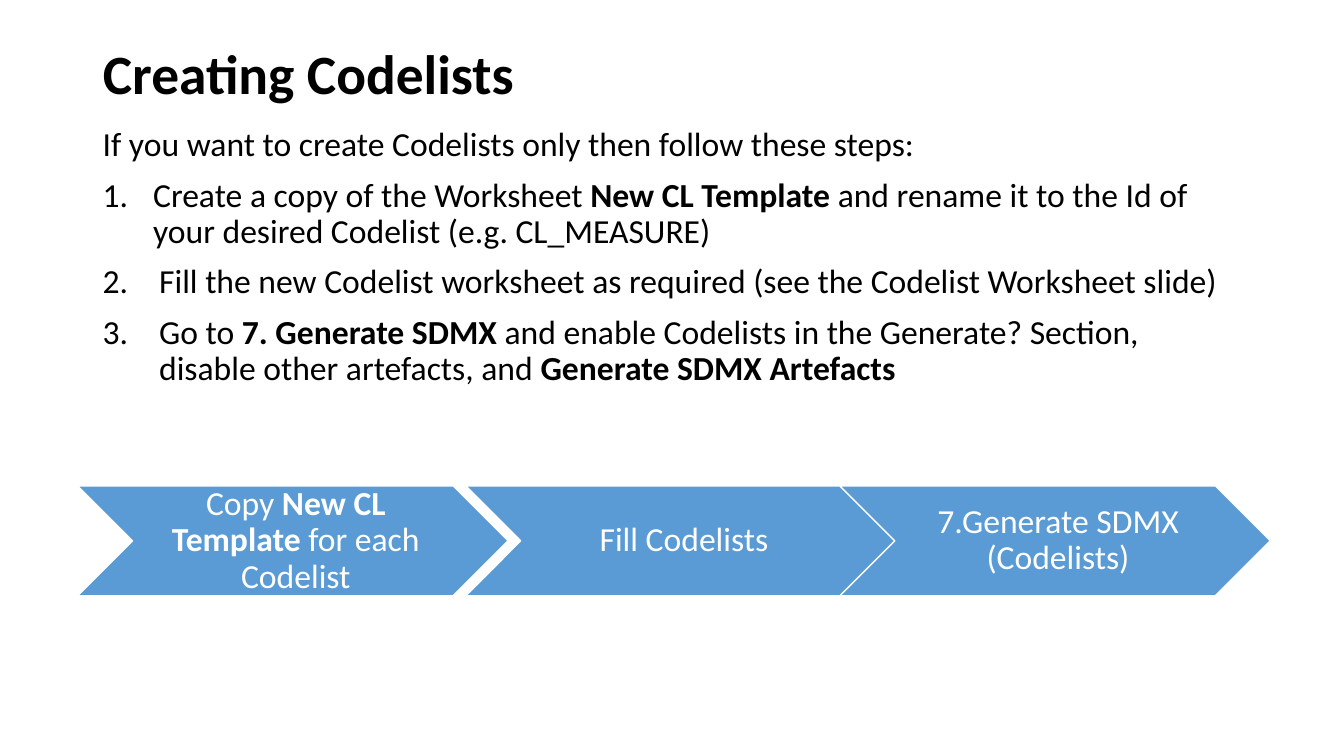
"""Build the slide that explains how to create codelists."""
from lxml.etree import SubElement
from pptx import Presentation
from pptx.dml.color import RGBColor
from pptx.enum.shapes import MSO_SHAPE
from pptx.enum.text import MSO_ANCHOR, PP_ALIGN
from pptx.oxml.ns import qn
from pptx.util import Inches, Pt

TITLE = "Creating Codelists"
INTRO = [("If you want to create Codelists only then follow these steps:", False)]
STEPS = [
    (0.5, [("Create a copy of the Worksheet ", False), ("New CL Template ", True),
           ("and rename it to the Id of your desired Codelist (e.g. CL_MEASURE)", False)]),
    (0.56, [("Fill the new Codelist worksheet as required (see the Codelist Worksheet slide)", False)]),
    (0.56, [("Go to ", False), ("7. Generate SDMX ", True),
            ("and enable Codelists in the Generate? Section, disable other artefacts, and ", False),
            ("Generate SDMX Artefacts", True)]),
]
FLOW = [
    (0.77, [("Copy ", False), ("New CL Template ", True), ("for each Codelist", False)]),
    (4.62, [("Fill Codelists", False)]),
    (8.33, [("7.Generate SDMX (Codelists)", False)]),
]

BLACK = RGBColor(0x00, 0x00, 0x00)
WHITE = RGBColor(0xFF, 0xFF, 0xFF)
BLUE = RGBColor(0x5B, 0x9B, 0xD5)
SLIDE_WIDTH, SLIDE_HEIGHT = 13.33, 7.5
MARGIN = 0.92
CONTENT_WIDTH = SLIDE_WIDTH - 2 * MARGIN
FLOW_TOP, CHEVRON_WIDTH, CHEVRON_HEIGHT = 4.82, 4.27, 1.09
CHEVRON_INSETS = {"margin_left": 0.1, "margin_top": 0.04, "margin_right": 0.04, "margin_bottom": 0.04}


def box(*lengths):
    return [Inches(length) for length in lengths]


def write(paragraph, runs, color, size=24, **layout):
    for name, value in {"line_spacing": 0.9, **layout}.items():
        setattr(paragraph, name, value)
    for words, bold in runs:
        run = paragraph.add_run()
        run.text = words
        for name, value in {"name": "Calibri", "size": Pt(size), "bold": bold}.items():
            setattr(run.font, name, value)
        run.font.color.rgb = color


def number(paragraph, indent):
    properties = paragraph._p.get_or_add_pPr()
    properties.set("marL", str(Inches(indent)))
    properties.set("indent", str(-Inches(indent)))
    SubElement(properties, qn("a:buFont"), typeface="+mj-lt")
    SubElement(properties, qn("a:buAutoNum"), type="arabicPeriod")


def add_title(slide):
    title = slide.shapes.title
    title.left, title.top, title.width, title.height = box(MARGIN, 0.4, CONTENT_WIDTH, 0.71)
    title.text_frame.vertical_anchor = MSO_ANCHOR.MIDDLE
    write(title.text_frame.paragraphs[0], [(TITLE, True)], BLACK, 39.6, alignment=PP_ALIGN.LEFT)


def add_instructions(slide):
    instructions = slide.shapes.add_textbox(*box(MARGIN, 1.22, CONTENT_WIDTH, 5.54)).text_frame
    instructions.word_wrap = True
    write(instructions.paragraphs[0], INTRO, BLACK, space_before=Pt(10))
    for indent, runs in STEPS:
        step = instructions.add_paragraph()
        write(step, runs, BLACK, space_before=Pt(10))
        number(step, indent)


def add_flow(slide):
    for left, runs in FLOW:
        chevron = slide.shapes.add_shape(
            MSO_SHAPE.CHEVRON, *box(left, FLOW_TOP, CHEVRON_WIDTH, CHEVRON_HEIGHT))
        chevron.shadow.inherit = False
        chevron.fill.solid()
        chevron.fill.fore_color.rgb = BLUE
        chevron.line.color.rgb = WHITE
        chevron.line.width = Pt(1)
        label = chevron.text_frame
        label.word_wrap = True
        label.vertical_anchor = MSO_ANCHOR.MIDDLE
        for name, inset in CHEVRON_INSETS.items():
            setattr(label, name, Inches(inset))
        write(label.paragraphs[0], runs, WHITE, alignment=PP_ALIGN.CENTER)


def main():
    deck = Presentation()
    deck.slide_width, deck.slide_height = box(SLIDE_WIDTH, SLIDE_HEIGHT)
    slide = deck.slides.add_slide(deck.slide_layouts.get_by_name("Title Only"))
    add_title(slide)
    add_instructions(slide)
    add_flow(slide)
    deck.save("out.pptx")


if __name__ == "__main__":
    main()
